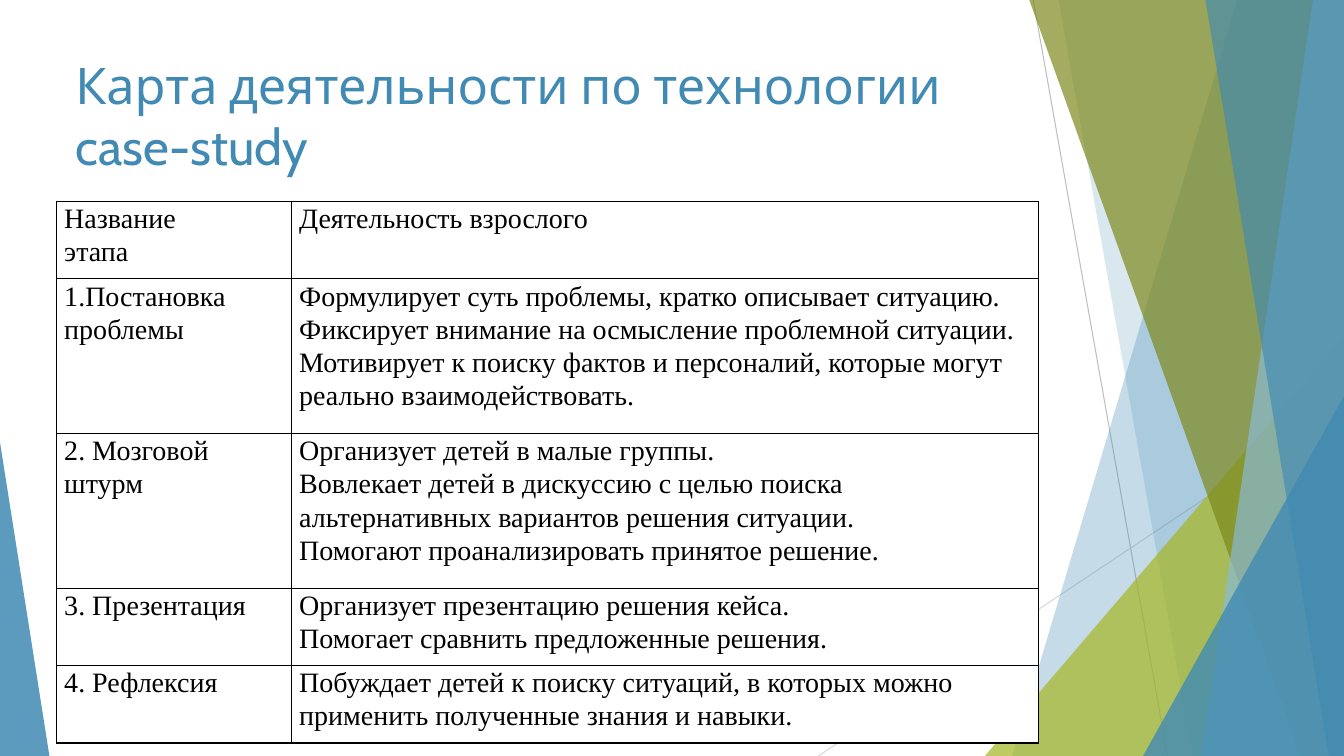
from lxml import etree
from pptx import Presentation
from pptx.dml.color import RGBColor
from pptx.enum import shapes as sh, text as tx
from pptx.oxml import ns
from pptx.util import Pt

WIDE, HIGH = 960, 540
BLUE, BLACK, WHITE = "418AB3", "000000", "FFFFFF"

STAGES = [
    (["Название", "этапа"], ["Деятельность взрослого"]),
    (["1.Постановка проблемы"],
     ["Формулирует суть проблемы, кратко описывает ситуацию.",
      "Фиксирует внимание на осмысление проблемной ситуации.",
      "Мотивирует к поиску фактов и персоналий, которые могут реально взаимодействовать."]),
    (["2. Мозговой штурм"],
     ["Организует детей в малые группы.",
      "Вовлекает детей в дискуссию с целью поиска альтернативных вариантов решения ситуации.",
      "Помогают проанализировать принятое решение."]),
    (["3. Презентация"],
     ["Организует презентацию решения кейса.",
      "Помогает сравнить предложенные решения."]),
    (["4. Рефлексия"],
     ["Побуждает детей к поиску ситуаций, в которых можно применить полученные знания и навыки."]),
]


def rgb(code):
    return RGBColor.from_string(code)


def sub(node, tag, **attrs):
    return etree.SubElement(node, ns.qn(tag), attrs)


def paint(shape, color, alpha):
    """Fill a shape with a see-through colour; alpha is in percent."""
    shape.shadow.inherit = False
    shape.line.fill.background()
    shape.fill.solid()
    shape.fill.fore_color.rgb = rgb(color)
    tint = shape.fill._xPr.find(".//" + ns.qn("a:srgbClr"))
    sub(tint, "a:alpha", val=str(alpha * 1000))


def add_line(slide, ends, color):
    line = slide.shapes.add_connector(
        sh.MSO_CONNECTOR.STRAIGHT, *[Pt(n) for n in ends])
    line.line.color.rgb = rgb(color)
    line.line.width = Pt(0.75)
    sub(line._element.spPr, "a:effectLst")


def add_band(slide, top, base, color, alpha):
    """Fill the area right of a slanted edge from x=top to x=base."""
    pen = slide.shapes.build_freeform(Pt(top), Pt(-0.7))
    pen.add_line_segments([(Pt(x), Pt(y)) for x, y in (
        (WIDE, -0.7), (WIDE, HIGH), (base, HIGH))])
    paint(pen.convert_to_shape(), color, alpha)


def add_wedge(slide, left, top, width, tip, color, alpha):
    """Stand a triangle on the lower edge; tip is 0 (left) to 1 (right)."""
    wedge = slide.shapes.add_shape(
        sh.MSO_SHAPE.ISOSCELES_TRIANGLE,
        Pt(left), Pt(top), Pt(width), Pt(HIGH - top))
    wedge.adjustments[0] = tip
    paint(wedge, color, alpha)


def style(para, font, size, color):
    for run in para.runs:
        run.font.name = font
        run.font.size = Pt(size)
        run.font.bold = False
        run.font.color.rgb = rgb(color)


def add_title(slide, words):
    box = slide.shapes.add_textbox(Pt(46.8), 0, Pt(676.8), Pt(128.9))
    frame = box.text_frame
    frame.word_wrap = True
    frame.vertical_anchor = tx.MSO_ANCHOR.BOTTOM
    frame.text = words
    style(frame.paragraphs[0], "Cabin", 36, BLUE)


def edge(cell):
    props = cell._tc.get_or_add_tcPr()
    for side in "LRTB":
        line = sub(props, "a:ln" + side, w=str(Pt(1)))
        sub(sub(line, "a:solidFill"), "a:srgbClr", val=BLACK)


def fill_cell(cell, lines):
    edge(cell)
    cell.fill.solid()
    cell.fill.fore_color.rgb = rgb(WHITE)
    cell.margin_left = cell.margin_right = Pt(5.5)
    cell.margin_top = cell.margin_bottom = 0
    cell.text = "\n".join(lines)
    for para in cell.text_frame.paragraphs:
        para.line_spacing = 1.07
        style(para, "Times New Roman", 20, BLACK)


def add_grid(slide, rows):
    wides, highs = (167.8, 533.5), (55.3, 110.5, 110.5, 55.3, 55.3)
    grid = slide.shapes.add_table(
        len(rows), len(wides), Pt(40.4), Pt(143.9),
        Pt(sum(wides)), Pt(sum(highs))).table
    grid.first_row = grid.horz_banding = False
    for col, wide in zip(grid.columns, wides):
        col.width = Pt(wide)
    for row, high, cells in zip(grid.rows, highs, rows):
        row.height = Pt(high)
        for cell, lines in zip(row.cells, cells):
            fill_cell(cell, lines)


def add_decor(slide):
    add_line(slide, (738, 0, 834, HIGH), "BFBFBF")
    add_line(slide, (WIDE, 290, 584.6, HIGH), "D9D9D9")
    add_band(slide, 884, 723, BLUE, 30)
    add_band(slide, 756, 852, BLUE, 20)
    add_wedge(slide, 703.5, 240, 256.5, 1, "A6B727", 72)
    add_band(slide, 735, 929.5, "7D891D", 70)
    add_band(slide, 938, 858, "8ABAD4", 70)
    add_band(slide, 861, 949, BLUE, 65)
    add_wedge(slide, 816.5, 283, 143.5, 1, BLUE, 80)
    add_wedge(slide, 0, 316, 35.3, 0, BLUE, 85)


def main():
    deck = Presentation()
    deck.slide_width, deck.slide_height = Pt(WIDE), Pt(HIGH)
    slide = deck.slides.add_slide(deck.slide_layouts[6])
    add_decor(slide)
    add_title(slide, "Карта деятельности по технологии case-study")
    add_grid(slide, STAGES)
    deck.save("out.pptx")


if __name__ == "__main__":
    main()
